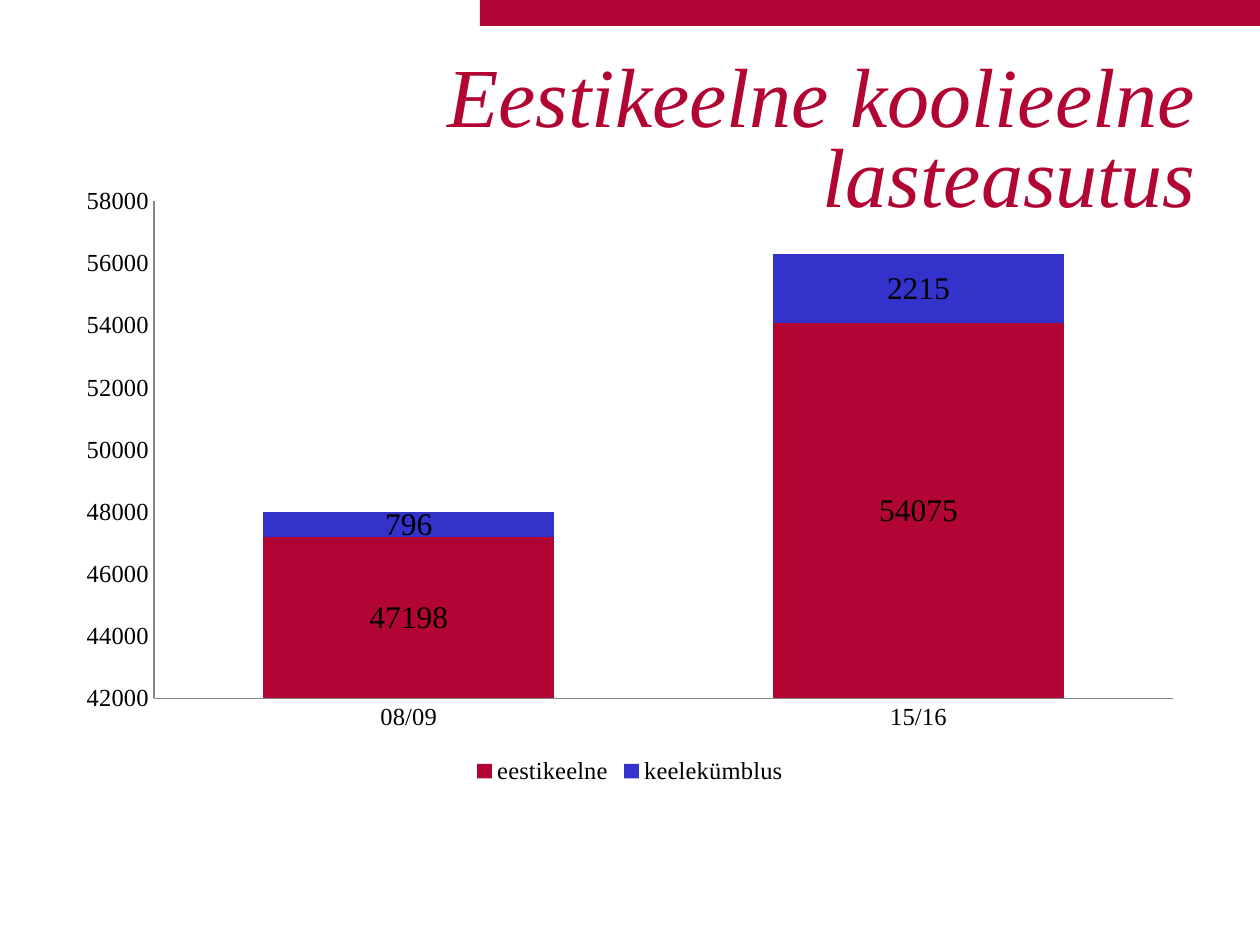
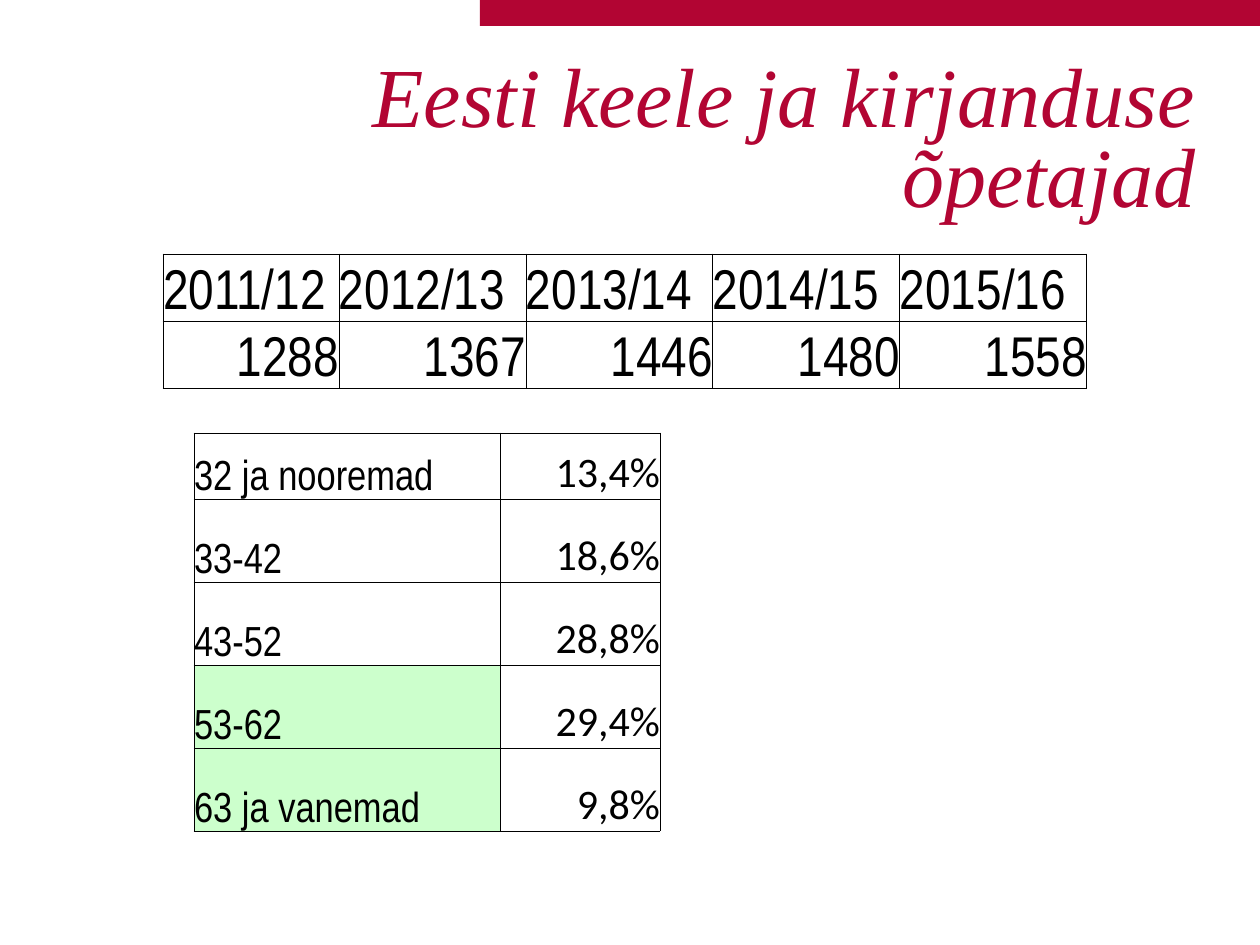
from dataclasses import dataclass, field

import pptx
import pptx.chart.data
import pptx.dml.color
import pptx.enum.chart
import pptx.enum.shapes
import pptx.enum.text
import pptx.oxml
import pptx.oxml.ns
import pptx.util

SCALE = 914400 / 126  # EMU in one px
ALIGN = pptx.enum.text.PP_ALIGN
ANCHOR = pptx.enum.text.MSO_ANCHOR


@dataclass(frozen=True)
class Theme:
    red: str = "B20533"
    blue: str = "3333CC"
    green: str = "CCFFCC"
    black: str = "000000"
    gray: str = "878787"
    serif: str = "Times New Roman"
    narrow: str = "Arial Narrow"
    sans: str = "Calibri"
    title: int = 48
    year: int = 32
    age: int = 24
    label: int = 18
    axis: int = 14


THEME = Theme()


@dataclass(frozen=True)
class Box:
    left: int
    top: int
    width: int
    height: int

    def emu(self) -> tuple:
        return tuple(px(n) for n in (self.left, self.top, self.width, self.height))


@dataclass(frozen=True)
class Cell:
    text: str
    font: str = THEME.narrow
    align: int = ALIGN.LEFT
    fill: str = ""


@dataclass(frozen=True)
class Grid:
    box: Box
    cols: list
    rows: list
    size: int
    cells: list = field(default_factory=list)


@dataclass(frozen=True)
class Series:
    name: str
    values: tuple
    color: str


BAND = Box(480, 0, 781, 26)
TITLE = Box(63, 67, 1133, 156)
CHART = Box(64, 175, 1132, 615)


def px(length: int) -> int:
    return pptx.util.Emu(round(length * SCALE))


def rgb(color: str) -> pptx.dml.color.RGBColor:
    return pptx.dml.color.RGBColor.from_string(color)


def style(font, name: str, size: int, color: str) -> None:
    font.name = name
    font.size = pptx.util.Pt(size)
    font.color.rgb = rgb(color)


def paint(part, color: str) -> None:
    part.fill.solid()
    part.fill.fore_color.rgb = rgb(color)


# Slide frame: band and title
def add_page(deck, title: str):
    page = deck.slides.add_slide(deck.slide_layouts[6])
    band = page.shapes.add_shape(
        pptx.enum.shapes.MSO_SHAPE.RECTANGLE, *BAND.emu())
    band.shadow.inherit = False
    paint(band, THEME.red)
    band.line.fill.background()

    frame = page.shapes.add_textbox(*TITLE.emu()).text_frame
    frame.word_wrap = True
    frame.vertical_anchor = ANCHOR.BOTTOM
    frame.margin_left = frame.margin_right = 0
    frame.margin_top = frame.margin_bottom = 0
    line = frame.paragraphs[0]
    line.alignment = ALIGN.RIGHT
    line.line_spacing = 0.79
    run = line.add_run()
    run.text = title
    style(run.font, THEME.serif, THEME.title, THEME.red)
    run.font.italic = True
    return page


# Stacked chart
def add_chart(page, cats: tuple, series: list) -> None:
    data = pptx.chart.data.CategoryChartData()
    data.categories = cats
    for item in series:
        data.add_series(item.name, item.values)
    kind = pptx.enum.chart.XL_CHART_TYPE.COLUMN_STACKED
    chart = page.shapes.add_chart(kind, *CHART.emu(), data).chart
    style(chart.font, THEME.serif, THEME.axis, THEME.black)
    chart.has_title = False
    chart.has_legend = True
    chart.legend.position = pptx.enum.chart.XL_LEGEND_POSITION.BOTTOM
    chart.legend.include_in_layout = False

    for axis in (chart.category_axis, chart.value_axis):
        axis.has_major_gridlines = False
        axis.major_tick_mark = pptx.enum.chart.XL_TICK_MARK.NONE
        axis.minor_tick_mark = pptx.enum.chart.XL_TICK_MARK.NONE
        axis.format.line.color.rgb = rgb(THEME.gray)
    scale = chart.value_axis
    scale.minimum_scale, scale.maximum_scale = 42000, 58000
    scale.major_unit = 2000

    plot = chart.plots[0]
    plot.gap_width, plot.overlap = 75, 100
    plot.vary_by_categories = False
    for bars, item in zip(plot.series, series):
        paint(bars.format, item.color)
        labels = bars.data_labels
        labels.show_value = True
        style(labels.font, THEME.serif, THEME.label, THEME.black)


# Ruled tables
def add_edges(cell) -> None:
    props = cell._tc.get_or_add_tcPr()
    space = pptx.oxml.ns.nsdecls("a")
    for spot, side in enumerate("LRTB"):
        edge = pptx.oxml.parse_xml(
            f'<a:ln{side} {space} w="6350"><a:solidFill>'
            f'<a:srgbClr val="{THEME.black}"/></a:solidFill></a:ln{side}>')
        props.insert(spot, edge)


def fill_cell(cell, item: Cell, size: int) -> None:
    cell.margin_left = cell.margin_right = 0
    cell.margin_top = cell.margin_bottom = 0
    cell.vertical_anchor = ANCHOR.BOTTOM
    if item.fill:
        paint(cell, item.fill)
    else:
        cell.fill.background()
    add_edges(cell)
    line = cell.text_frame.paragraphs[0]
    line.alignment = item.align
    run = line.add_run()
    run.text = item.text
    style(run.font, item.font, size, THEME.black)


def add_grid(page, grid: Grid) -> None:
    frame = page.shapes.add_table(
        len(grid.rows), len(grid.cols), *grid.box.emu())
    table = frame.table
    table.first_row = table.horz_banding = False
    for col, width in zip(table.columns, grid.cols):
        col.width = px(width)
    for row, height, items in zip(table.rows, grid.rows, grid.cells):
        row.height = px(height)
        for cell, item in zip(row.cells, items):
            fill_cell(cell, item, grid.size)
    frame.height = px(grid.box.height)


def main() -> None:
    deck = pptx.Presentation()
    deck.slide_width, deck.slide_height = px(1260), px(945)

    # Slide 1: preschool
    page = add_page(deck, "Eestikeelne koolieelne lasteasutus")
    add_chart(page, ("08/09", "15/16"), [
        Series("eestikeelne", (47198, 54075), THEME.red),
        Series("keelekümblus", (796, 2215), THEME.blue),
    ])

    # Slide 2: teachers by year and by age
    page = add_page(deck, "Eesti keele ja kirjanduse õpetajad")
    years = {"2011/12": "1288", "2012/13": "1367", "2013/14": "1446",
             "2014/15": "1480", "2015/16": "1558"}
    add_grid(page, Grid(
        Box(163, 254, 924, 135), [176] + [187] * 4, [34, 62], THEME.year,
        [[Cell(year) for year in years],
         [Cell(count, align=ALIGN.RIGHT) for count in years.values()]]))

    ages = [("32 ja nooremad", "13,4%", ""), ("33-42", "18,6%", ""),
            ("43-52", "28,8%", ""), ("53-62", "29,4%", THEME.green),
            ("63 ja vanemad", "9,8%", THEME.green)]
    add_grid(page, Grid(
        Box(194, 433, 466, 397), [306, 160], [66] + [83] * 4, THEME.age,
        [[Cell(age, fill=fill), Cell(share, THEME.sans, ALIGN.RIGHT)]
         for age, share, fill in ages]))

    deck.save("out.pptx")


if __name__ == "__main__":
    main()
